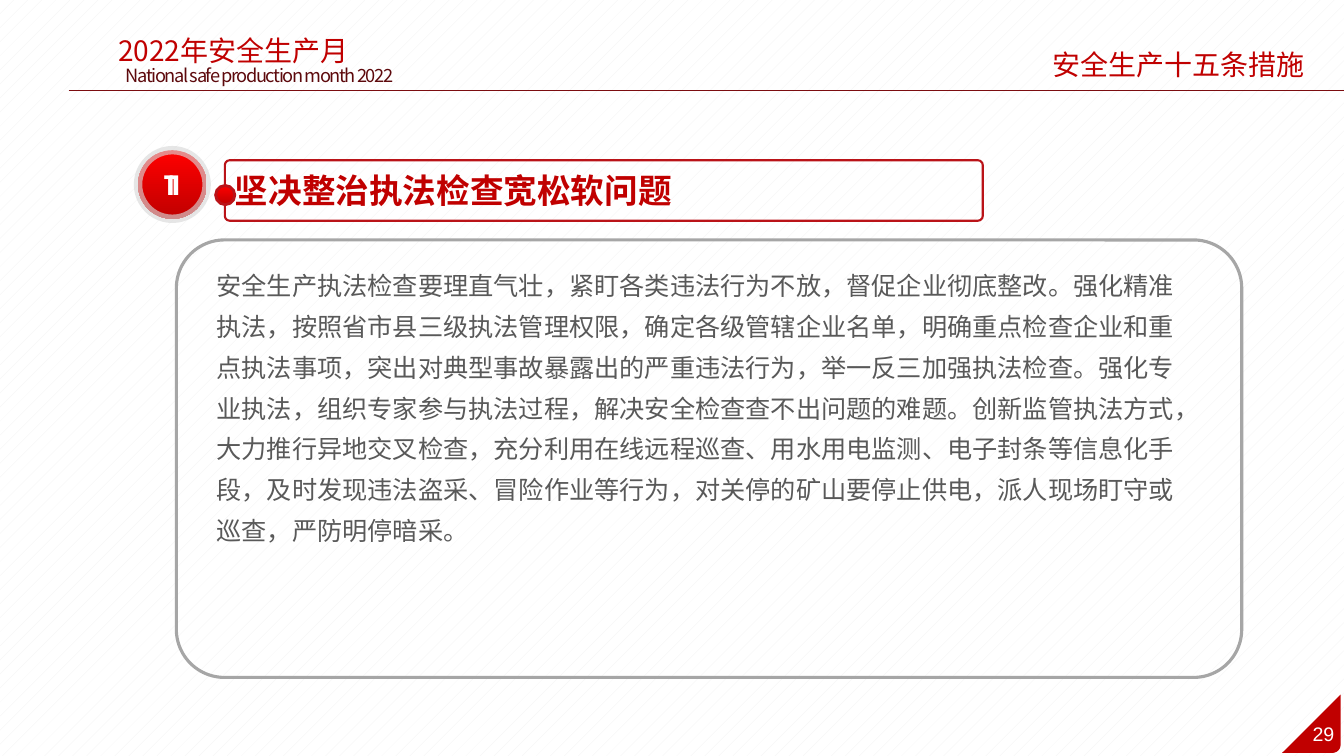
"""Build the safety measures slide on lax enforcement inspections."""
from math import cos, radians, sin

from lxml.etree import SubElement
from pptx import Presentation
from pptx.dml.color import RGBColor
from pptx.enum.dml import MSO_PATTERN
from pptx.enum.shapes import MSO_CONNECTOR, MSO_SHAPE as Preset
from pptx.enum.text import MSO_ANCHOR as Anchor, MSO_AUTO_SIZE, PP_ALIGN as Align
from pptx.oxml.ns import qn
from pptx.util import Pt

color = RGBColor.from_string
CJK = "Noto Sans CJK SC"
RED = "C00000"
BORDER_RED = "BA1318"


def write(box, text, size, ink, font=CJK, align=Align.LEFT, bold=False,
          tracking=0, wrap=True, anchor=Anchor.TOP):
    """Put one formatted paragraph into a box and return it."""
    frame = box.text_frame
    frame.text = text
    frame.word_wrap = wrap
    frame.auto_size = MSO_AUTO_SIZE.NONE
    frame.vertical_anchor = anchor
    para = frame.paragraphs[0]
    para.alignment = align
    span = para.runs[0]
    span.font.size = Pt(size)
    span.font.bold = bold
    span.font.color.rgb = color(ink)
    span.font.name = font
    props = span.font._element
    SubElement(props, qn("a:ea"), typeface=font)
    if tracking:
        props.set("spc", str(tracking * 100))
    return para


def add_preset(preset, place, line, width, gradient=False):
    """Add an outlined shape, hollow or with the red gradient."""
    shape = page.shapes.add_shape(preset, *map(Pt, place))
    shape.shadow.inherit = False
    shape.line.color.rgb = color(line)
    shape.line.width = Pt(width)
    if gradient:
        shape.fill.gradient()
        shape.fill.gradient_angle = 270
        for stop, (position, tint) in zip(shape.fill.gradient_stops, ((0, "FF0000"), (1, RED))):
            stop.position = position
            stop.color.rgb = color(tint)
    else:
        shape.fill.background()
    return shape


deck = Presentation()
deck.slide_width, deck.slide_height = Pt(960), Pt(540)
page = deck.slides.add_slide(deck.slide_layouts[5])
backdrop = page.background.fill
backdrop.patterned()
backdrop.pattern = MSO_PATTERN.PERCENT_5
backdrop.fore_color.rgb = color("F2F2F2")
backdrop.back_color.rgb = color("FFFFFF")

rule = page.shapes.add_connector(MSO_CONNECTOR.STRAIGHT, Pt(49), Pt(64.4), Pt(960), Pt(64.4))
rule.line.color.rgb = color("7C0D10")
rule.line.width = Pt(0.75)
SubElement(rule._element.spPr, qn("a:effectLst"))

right, bottom, radius = 957.6, 537.8, 5.8
outline = page.shapes.build_freeform(Pt(right), Pt(496.1))
arc = [(right - radius + radius * cos(radians(angle)), bottom - radius + radius * sin(radians(angle)))
       for angle in range(0, 91, 15)]
outline.add_line_segments([(Pt(x), Pt(y)) for x, y in arc + [(915.8, bottom)]])
corner = outline.convert_to_shape()
corner.shadow.inherit = False
corner.fill.solid()
corner.fill.fore_color.rgb = color(RED)
corner.line.fill.background()

labels = [
    ((929.5, 512, 31.7, 24.5), "29", 14, "FFFFFF", "Arial", Align.CENTER, 0),
    ((43.2, 20.2, 247, 31.7), "2022年安全生产月", 20, RED, CJK, Align.CENTER, 0),
    ((79.2, 42.5, 212.4, 23), "National safe production month 2022", 13, "5D090C", CJK, Align.CENTER, -1),
    ((692, 30.2, 247, 31.7), "安全生产十五条措施", 20, RED, CJK, Align.RIGHT, 0),
]
for place, text, size, ink, font, align, tracking in labels:
    label = page.shapes.add_textbox(*map(Pt, place))
    write(label, text, size, ink, font, align, tracking=tracking, wrap=False)

badge = add_preset(Preset.OVAL, (98.6, 107.3, 49, 49), "D9D9D9", 6, gradient=True)
SubElement(badge.line.fill._xPr.find(".//" + qn("a:srgbClr")), qn("a:alpha"), val="63000")
write(badge, "11", 20, "FFFFFF", "Montserrat", Align.CENTER, True, -4, anchor=Anchor.MIDDLE)

heading_place = (160.6, 114.5, 541.4, 43.2)
heading_frame = add_preset(Preset.ROUNDED_RECTANGLE, heading_place, BORDER_RED, 1.5)
heading_frame.adjustments[0] = 0.08
add_preset(Preset.FLOWCHART_CONNECTOR, (154, 132.5, 13.7, 13.7), BORDER_RED, 2, gradient=True)

title = page.shapes.title
title.left, title.top, title.width, title.height = map(Pt, heading_place)
write(title, "坚决整治执法检查宽松软问题", 24, RED, bold=True, anchor=Anchor.MIDDLE)

body = page.shapes.add_textbox(Pt(147.6), Pt(182.2), Pt(705.6), Pt(213))
body_para = write(body, (
    "安全生产执法检查要理直气壮，紧盯各类违法行为不放，督促企业彻底整改。"
    "强化精准执法，按照省市县三级执法管理权限，确定各级管辖企业名单，"
    "明确重点检查企业和重点执法事项，突出对典型事故暴露出的严重违法行为，举一反三加强执法检查。"
    "强化专业执法，组织专家参与执法过程，解决安全检查查不出问题的难题。"
    "创新监管执法方式，大力推行异地交叉检查，充分利用在线远程巡查、用水用电监测、电子封条等信息化手段，"
    "及时发现违法盗采、冒险作业等行为，对关停的矿山要停止供电，派人现场盯守或巡查，严防明停暗采。"
), 18, "595959")
body_para.line_spacing = 1.35

panel = add_preset(Preset.ROUNDED_RECTANGLE, (126, 171.4, 761, 312.5), "A6A6A6", 2.25)
panel.adjustments[0] = 0.11

deck.save("out.pptx")
